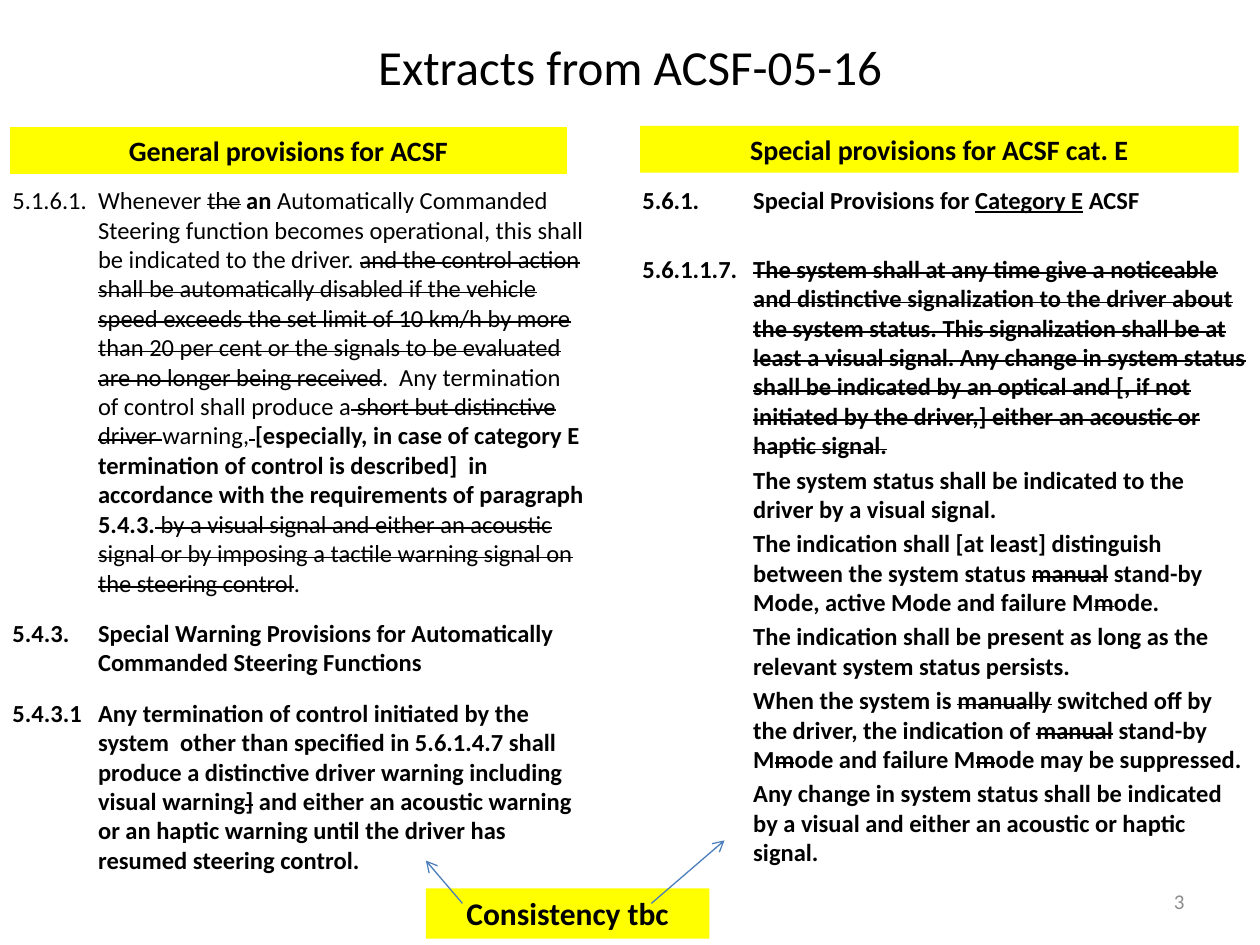
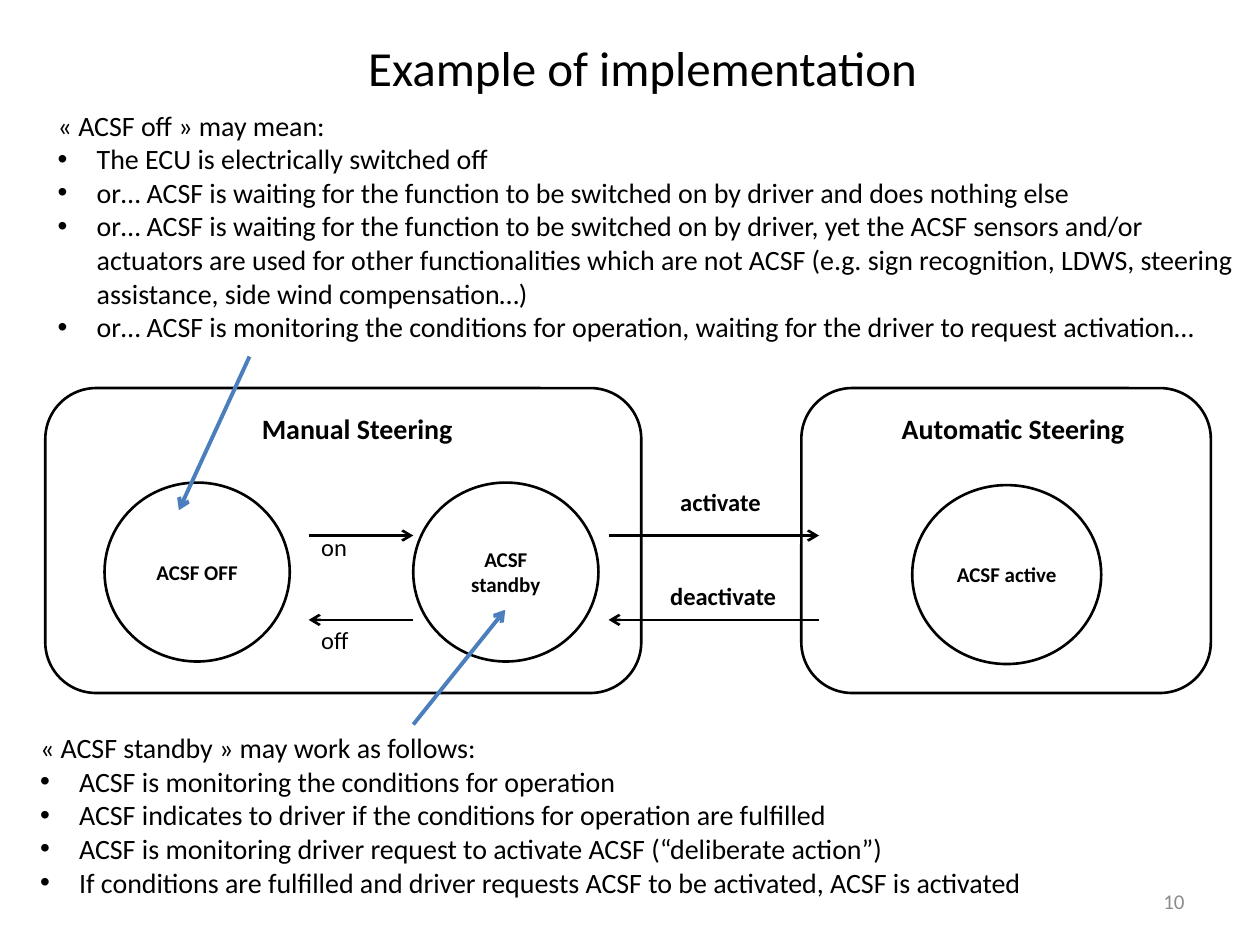
from lxml.etree import SubElement
from pptx import Presentation
from pptx.dml.color import RGBColor
from pptx.enum.shapes import MSO_CONNECTOR, MSO_SHAPE
from pptx.enum.text import MSO_ANCHOR as ANCHOR
from pptx.enum.text import MSO_AUTO_SIZE, PP_ALIGN as ALIGN
from pptx.oxml.ns import qn
from pptx.util import Inches, Pt

FONT = "Calibri"
COLORS = {"text": "000000", "band": "FFFF00", "accent": "4B7EBC", "number": "8C8C8C"}
TITLE_ONLY = 5

# Runs are (text, marks): b bold, s struck through, u underlined
# Each clause is (space before in points, runs)
GENERAL_CLAUSES = [
    (0, [
        ("5.1.6.1.\tWhenever ", ""), ("the", "s"), (" ", ""), ("an", "b"),
        (" Automatically Commanded Steering function becomes operational, this shall be "
         "indicated to the driver. ", ""),
        ("and the control action shall be automatically disabled if the vehicle speed exceeds "
         "the set limit of 10 km/h by more than 20 per cent or the signals to be evaluated are "
         "no longer being received", "s"),
        (".  Any termination of control shall produce a", ""),
        (" short but distinctive driver ", "s"), ("warning,", ""), (" ", "s"),
        ("[especially, in case of category E termination of control is described]  in "
         "accordance with the requirements of paragraph 5.4.3.", "b"),
        (" by a visual signal and either an acoustic signal or by imposing a tactile warning "
         "signal on the steering control", "s"),
        (".", ""),
    ]),
    (12, [("5.4.3.\tSpecial Warning Provisions for Automatically Commanded Steering Functions",
           "b")]),
    (12, [
        ("5.4.3.1\tAny termination of control initiated by the system  other than specified in "
         "5.6.1.4.7 shall produce a distinctive driver warning including visual warning", "b"),
        ("]", "bs"),
        (" and either an acoustic warning or an haptic warning until the driver has resumed "
         "steering control.", "b"),
    ]),
]
SPECIAL_CLAUSES = [
    (0, [("5.6.1.\tSpecial Provisions for ", "b"), ("Category E", "bu"), (" ACSF", "b")]),
    (22.4, [
        ("5.6.1.1.7.\t", "b"),
        ("The system shall at any time give a noticeable and distinctive signalization to the "
         "driver about the system status. This signalization shall be at least a visual signal. "
         "Any change in system status shall be indicated by an optical and [, if not initiated "
         "by the driver,] either an acoustic or haptic signal.", "bs"),
    ]),
]
SPECIAL_DETAILS = [
    (2.8, [("The system status shall be indicated to the driver by a visual signal.", "b")]),
    (2.8, [
        ("The indication shall [at least] distinguish between the system status ", "b"),
        ("manual", "bs"), (" stand-by Mode, active Mode and failure M", "b"),
        ("m", "bs"), ("ode.", "b"),
    ]),
    (2.8, [("The indication shall be present as long as the relevant system status persists.",
            "b")]),
    (2.8, [
        ("When the system is ", "b"), ("manually", "bs"),
        (" switched off by the driver, the indication of ", "b"), ("manual", "bs"),
        (" stand-by M", "b"), ("m", "bs"), ("ode and failure M", "b"), ("m", "bs"),
        ("ode may be suppressed.", "b"),
    ]),
    (2.8, [("Any change in system status shall be indicated by a visual and either an acoustic "
            "or haptic signal.", "b")]),
]
OFF_MEANINGS = [
    "The ECU is electrically switched off",
    "or… ACSF is waiting for the function to be switched on by driver and does nothing else",
    "or… ACSF is waiting for the function to be switched on by driver, yet the ACSF sensors "
    "and/or actuators are used for other functionalities which are not ACSF (e.g. sign "
    "recognition, LDWS, steering assistance, side wind compensation…)",
    "or… ACSF is monitoring the conditions for operation, waiting for the driver to request "
    "activation…",
]
STANDBY_STEPS = [
    "ACSF is monitoring the conditions for operation",
    "ACSF indicates to driver if the conditions for operation are fulfilled",
    "ACSF is monitoring driver request to activate ACSF (“deliberate action”)",
    "If conditions are fulfilled and driver requests ACSF to be activated, ACSF is activated",
]


def rgb(name):
    return RGBColor.from_string(COLORS[name])


def inches(values):
    return [Inches(value) for value in values]


def add_span(para, text, size, marks="", color="text"):
    span = para.add_run()
    span.text = text
    font = span.font
    font.name, font.size, font.bold = FONT, Pt(size), "b" in marks
    font.color.rgb = rgb(color)
    if "u" in marks:
        font.underline = True
    if "s" in marks:
        span._r.get_or_add_rPr().set("strike", "sngStrike")


def set_indent(para, left, first):
    props = para._p.get_or_add_pPr()
    props.set("marL", str(Inches(left)))
    props.set("indent", str(Inches(first)))
    return props


def next_para(frame):
    """Return the first paragraph while it is empty, then a new one."""
    return frame.add_paragraph() if frame.paragraphs[0].runs else frame.paragraphs[0]


def add_box(page, at, wrap=True):
    frame = page.shapes.add_textbox(*inches(at)).text_frame
    frame.word_wrap = wrap
    return frame


def add_label(page, at, text, size, marks="", align=ALIGN.LEFT, wrap=False,
              color="text", anchor=ANCHOR.TOP):
    frame = add_box(page, at, wrap)
    frame.vertical_anchor = anchor
    para = frame.paragraphs[0]
    para.alignment = align
    add_span(para, text, size, marks, color)


def add_page(deck, title, title_at, number, anchor):
    """Add a page with its title and page number."""
    page = deck.slides.add_slide(deck.slide_layouts[TITLE_ONLY])
    holder = page.shapes.title
    holder.left, holder.top, holder.width, holder.height = inches(title_at)
    frame = holder.text_frame
    frame.auto_size = MSO_AUTO_SIZE.NONE
    frame.word_wrap = True
    frame.vertical_anchor = anchor
    frame.paragraphs[0].alignment = ALIGN.CENTER
    add_span(frame.paragraphs[0], title, 28)
    add_label(page, (7.17, 6.95, 2.33, 0.4), number, 12, align=ALIGN.RIGHT, wrap=True,
              color="number", anchor=ANCHOR.MIDDLE)
    return page


def add_shape(page, kind, at, text="", size=12, fill=None, anchor=ANCHOR.MIDDLE):
    """Add a filled shape without outline, or an outlined one without fill."""
    shape = page.shapes.add_shape(kind, *inches(at))
    shape.shadow.inherit = False
    if fill:
        shape.fill.solid()
        shape.fill.fore_color.rgb = rgb(fill)
        shape.line.fill.background()
    else:
        shape.fill.background()
        shape.line.color.rgb = rgb("text")
        shape.line.width = Pt(1.5)
    if text:
        frame = shape.text_frame
        frame.word_wrap = True
        frame.vertical_anchor = anchor
        frame.paragraphs[0].alignment = ALIGN.CENTER
        add_span(frame.paragraphs[0], text, size, "b")


def add_band(page, at, text, size):
    add_shape(page, MSO_SHAPE.RECTANGLE, at, text, size, fill="band", anchor=ANCHOR.TOP)


def add_arrow(page, start, end, color="text", width=1.5):
    arrow = page.shapes.add_connector(MSO_CONNECTOR.STRAIGHT, *inches(start + end))
    arrow.line.color.rgb = rgb(color)
    arrow.line.width = Pt(width)
    SubElement(arrow.line._get_or_add_ln(), qn("a:tailEnd"), type="arrow")
    SubElement(arrow._element.spPr, qn("a:effectLst"))


def add_clauses(frame, clauses, left, first):
    for space, runs in clauses:
        para = next_para(frame)
        set_indent(para, left, first)
        para.space_before = Pt(space)
        for text, marks in runs:
            add_span(para, text, 14, marks)


def add_bullet_list(page, at, heading, items):
    frame = add_box(page, at)
    add_span(frame.paragraphs[0], heading, 16)
    for item in items:
        para = next_para(frame)
        props = set_indent(para, 0.31, -0.31)
        SubElement(props, qn("a:buFont"), typeface="Arial")
        SubElement(props, qn("a:buChar"), char="•")
        add_span(para, item, 16)


def build_extracts(deck):
    page = add_page(deck, "Extracts from ACSF-05-16", (0.5, 0.17, 9, 0.7), "3", ANCHOR.MIDDLE)

    # Provisions in two columns
    general = add_box(page, (0, 1.42, 4.75, 5.58))
    add_clauses(general, GENERAL_CLAUSES, 0.68, -0.68)
    special = add_box(page, (5, 1.42, 5, 5.58))
    add_clauses(special, SPECIAL_CLAUSES, 0.88, -0.88)
    add_clauses(special, SPECIAL_DETAILS, 0.88, 0)

    # Yellow bands
    add_band(page, (0.08, 1.01, 4.42, 0.37), "General provisions for ACSF", 16)
    add_band(page, (5.08, 1, 4.75, 0.37), "Special provisions for ACSF cat. E", 16)
    add_band(page, (3.38, 7.05, 2.25, 0.4), "Consistency tbc", 18)

    # Arrows from the consistency remark to both columns
    add_arrow(page, (5.17, 7.17), (5.75, 6.67), "accent", 0.75)
    add_arrow(page, (3.67, 7.17), (3.38, 6.83), "accent", 0.75)


def build_example(deck):
    page = add_page(deck, "Example of implementation", (0.22, 0.25, 9.76, 0.6), "10", ANCHOR.TOP)

    # States
    for at, state in [((0.83, 3.83, 1.47, 1.42), "ACSF OFF"),
                      ((3.28, 3.83, 1.47, 1.42), "ACSF standby"),
                      ((7.24, 3.85, 1.5, 1.42), "ACSF active")]:
        add_shape(page, MSO_SHAPE.OVAL, at, state)

    # Steering modes around the states
    for left, width in [(0.36, 4.73), (6.36, 3.25)]:
        add_shape(page, MSO_SHAPE.ROUNDED_RECTANGLE, (left, 3.08, width, 2.42))
    add_label(page, (1.98, 3.22, 1.73, 0.37), "Manual Steering", 16, "b")
    add_label(page, (7, 3.22, 2.08, 0.37), "Automatic Steering", 16, "b", ALIGN.CENTER, True)

    # Transitions: forward above, back below
    for left, right in [(2.45, 3.28), (4.83, 6.5)]:
        add_arrow(page, (left, 4.25), (right, 4.25))
        add_arrow(page, (right, 4.92), (left, 4.92))
    for at, name, marks in [((2.45, 4.17, 0.41, 0.34), "on", ""),
                            ((2.45, 4.91, 0.42, 0.34), "off", ""),
                            ((5.3, 3.82, 0.85, 0.34), "activate", "b"),
                            ((5.22, 4.56, 1.05, 0.34), "deactivate", "b")]:
        add_label(page, at, name, 14, marks)

    # Explanations and their pointers
    add_bullet_list(page, (0.36, 0.81, 9.64, 2.52), "« ACSF off » may mean:", OFF_MEANINGS)
    add_arrow(page, (1.98, 2.83), (1.42, 4.05), "accent", 2.25)
    add_bullet_list(page, (0.22, 5.75, 9.64, 1.45), "« ACSF standby » may work as follows:",
                    STANDBY_STEPS)
    add_arrow(page, (3.28, 5.75), (4.01, 4.84), "accent", 2.25)


def main():
    deck = Presentation()
    deck.slide_width, deck.slide_height = Inches(10), Inches(7.5)
    build_extracts(deck)
    build_example(deck)
    deck.save("out.pptx")


if __name__ == "__main__":
    main()
